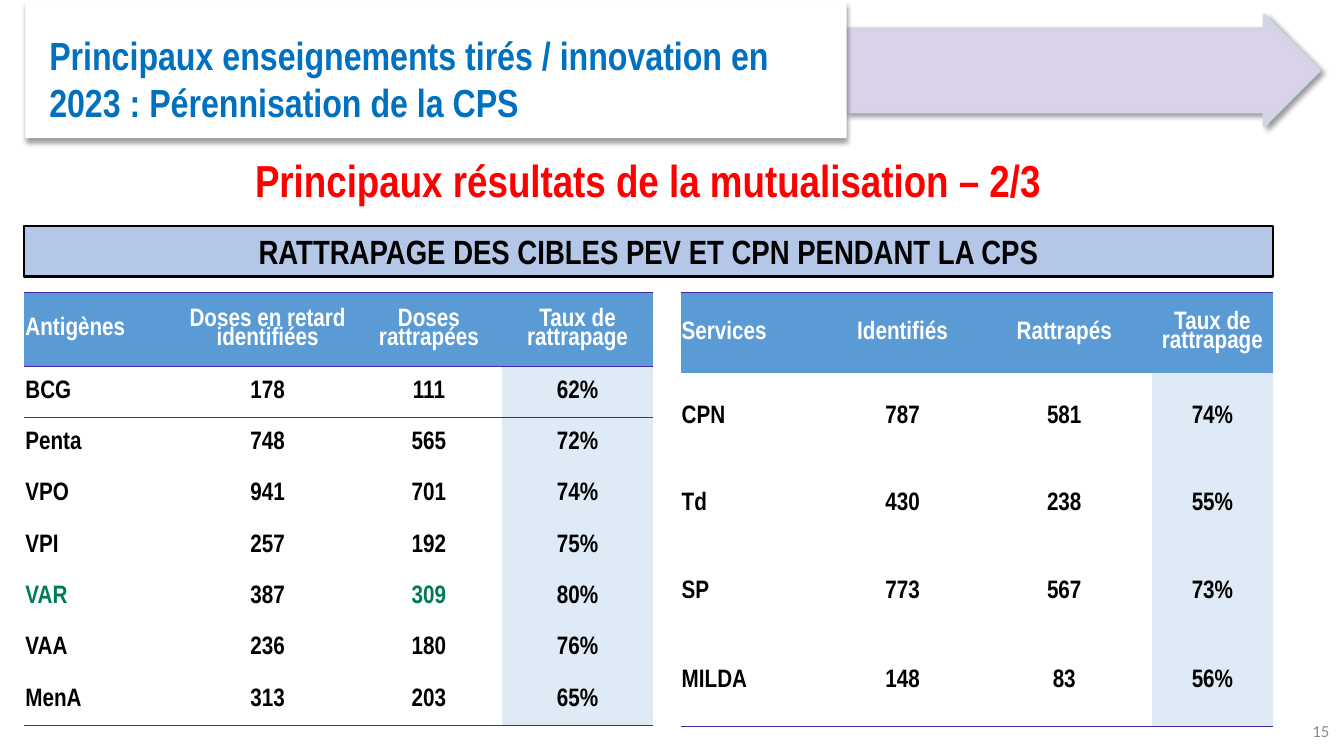
from dataclasses import dataclass
from typing import Any, Optional

from lxml.etree import SubElement
from pptx import Presentation
from pptx.dml.color import RGBColor
from pptx.enum.shapes import MSO_SHAPE
from pptx.enum.text import MSO_ANCHOR, PP_ALIGN
from pptx.oxml import parse_xml
from pptx.oxml.ns import nsdecls, qn
from pptx.util import Cm, Pt

WHITE = RGBColor(0xFF, 0xFF, 0xFF)
BLACK = RGBColor(0x00, 0x00, 0x00)
RED = RGBColor(0xFF, 0x00, 0x00)
GREEN = RGBColor(0x00, 0x7A, 0x5A)
GREY = RGBColor(0x8C, 0x8C, 0x8C)
TITLE_BLUE = RGBColor(0x00, 0x70, 0xC0)
BANNER_BLUE = RGBColor(0xB4, 0xC7, 0xE7)
HEADER_BLUE = RGBColor(0x5B, 0x9B, 0xD5)
RATE_BLUE = RGBColor(0xDE, 0xEB, 0xF7)
LILAC = RGBColor(0xD9, 0xD2, 0xE9)
ARROW_EDGE = RGBColor(0xCF, 0xD7, 0xE7)
RULE_PURPLE = RGBColor(0x46, 0x27, 0xA9)

NARROW = "Arial Narrow"
PLAIN_TABLE_STYLE = "{2D5ABB26-0587-4C30-8999-92F81FD0307C}"


@dataclass
class Block:
    """A shape or text box; lengths in centimetres, sizes in points."""
    left: float
    top: float
    width: float
    height: float
    shape: Optional[MSO_SHAPE] = None
    fill: Optional[RGBColor] = None
    line: Optional[RGBColor] = None
    line_width: float = 1.5
    adjustment: Optional[float] = None
    shadow_angle: Optional[int] = None
    text: str = ""
    size: float = 18
    color: RGBColor = BLACK
    font: str = NARROW
    bold: bool = True
    align: PP_ALIGN = PP_ALIGN.LEFT
    anchor: MSO_ANCHOR = MSO_ANCHOR.TOP
    margin: Optional[float] = None


@dataclass
class CatchUpTable:
    left: float
    columns: list[float]
    heights: list[float]
    rows: list[list[str]]
    rule_under_header: bool = False
    highlights: tuple[str, ...] = ()


BLOCKS = [
    # Header arrow and title card
    Block(21.34, 0.38, 11.91, 2.79, MSO_SHAPE.RIGHT_ARROW, LILAC, ARROW_EDGE, 2,
          adjustment=0.75, shadow_angle=45),
    Block(0.64, 0.05, 20.7, 3.43, MSO_SHAPE.RECTANGLE, WHITE, shadow_angle=90),
    # Slide number
    Block(32.28, 17.88, 1.47, 1.09, text="15", size=12, color=GREY, font="Calibri",
          bold=False, align=PP_ALIGN.RIGHT, anchor=MSO_ANCHOR.MIDDLE),
    # Title, banner and subtitle
    Block(0.86, 0.61, 20.19, 2.72, MSO_SHAPE.ROUNDED_RECTANGLE, adjustment=0.167,
          text="Principaux enseignements tirés / innovation en 2023 : "
               "Pérennisation de la CPS",
          size=28, color=TITLE_BLUE, anchor=MSO_ANCHOR.MIDDLE, margin=0.25),
    Block(0.61, 5.69, 31.47, 1.28, MSO_SHAPE.RECTANGLE, BANNER_BLUE, BLACK,
          text="RATTRAPAGE DES CIBLES PEV ET CPN PENDANT LA CPS",
          size=24, align=PP_ALIGN.CENTER),
    Block(0.61, 3.73, 31.47, 1.62,
          text="Principaux résultats de la mutualisation – 2/3",
          size=32, color=RED, align=PP_ALIGN.CENTER),
]

TABLE_TOP = 7.37
TABLES = [
    CatchUpTable(
        0.61, [3.91, 4.45, 3.68, 3.81], [1.87] + [1.29] * 6 + [1.31],
        [["Antigènes", "Doses en retard identifiées", "Doses rattrapées",
          "Taux de rattrapage"],
         ["BCG", "178", "111", "62%"],
         ["Penta", "748", "565", "72%"],
         ["VPO", "941", "701", "74%"],
         ["VPI", "257", "192", "75%"],
         ["VAR", "387", "309", "80%"],
         ["VAA", "236", "180", "76%"],
         ["MenA", "313", "203", "65%"]],
        rule_under_header=True, highlights=("VAR", "309")),
    CatchUpTable(
        17.15, [3.73, 3.73, 4.42, 3.05], [2.03] + [2.21] * 3 + [2.27],
        [["Services", "Identifiés", "Rattrapés", "Taux de rattrapage"],
         ["CPN", "787", "581", "74%"],
         ["Td", "430", "238", "55%"],
         ["SP", "773", "567", "73%"],
         ["MILDA", "148", "83", "56%"]]),
]


def set_all(target: Any, values: dict[str, Any]) -> None:
    for name, value in values.items():
        setattr(target, name, value)


def write(frame: Any, text: str, align: PP_ALIGN, size: float, color: RGBColor,
          font: str = NARROW, bold: bool = True, spacing: float = 1.0) -> None:
    para = frame.paragraphs[0]
    set_all(para, {"alignment": align, "line_spacing": spacing})
    span = para.add_run()
    span.text = text
    set_all(span.font, {"name": font, "size": Pt(size), "bold": bold})
    span.font.color.rgb = color


def add_shadow(shape: Any, angle: int) -> None:
    shape._element.spPr.append(parse_xml(
        f'<a:effectLst {nsdecls("a")}><a:outerShdw blurRad="{Pt(4)}" dist="{Pt(3)}" '
        f'dir="{angle * 60000}" algn="tl" rotWithShape="0"><a:srgbClr val="000000">'
        '<a:alpha val="40000"/></a:srgbClr></a:outerShdw></a:effectLst>'))


def draw_block(page: Any, block: Block) -> None:
    place = [Cm(v) for v in (block.left, block.top, block.width, block.height)]
    if block.shape is None:
        box = page.shapes.add_textbox(*place)
    else:
        box = page.shapes.add_shape(block.shape, *place)
        if block.adjustment is not None:
            box.adjustments[0] = block.adjustment
        for part, color in ((box.fill, block.fill), (box.line.fill, block.line)):
            if color is None:
                part.background()
            else:
                part.solid()
                part.fore_color.rgb = color
        if block.line is not None:
            box.line.width = Pt(block.line_width)
        if block.shadow_angle is None:
            box.shadow.inherit = False
        else:
            add_shadow(box, block.shadow_angle)
    if block.text:
        frame = box.text_frame
        set_all(frame, {"word_wrap": True, "vertical_anchor": block.anchor})
        if block.margin is not None:
            sides = ("left", "right", "top", "bottom")
            set_all(frame, {f"margin_{side}": Cm(block.margin) for side in sides})
        write(frame, block.text, block.align, block.size, block.color,
              block.font, block.bold)


def add_rule(cell: Any, tag: str) -> None:
    line = SubElement(cell._tc.get_or_add_tcPr(), qn(tag), w=str(Pt(1)))
    fill = SubElement(line, qn("a:solidFill"))
    SubElement(fill, qn("a:srgbClr"), val=str(RULE_PURPLE))


def draw_table(page: Any, data: CatchUpTable) -> None:
    frame = page.shapes.add_table(
        len(data.rows), len(data.columns), Cm(data.left), Cm(TABLE_TOP),
        Cm(sum(data.columns)), Cm(sum(data.heights)))
    table = frame.table
    set_all(table, {"first_row": False, "horz_banding": False})
    table._tbl.tblPr.find(qn("a:tableStyleId")).text = PLAIN_TABLE_STYLE
    for column, width in zip(table.columns, data.columns):
        column.width = Cm(width)
    for row, height in zip(table.rows, data.heights):
        row.height = Cm(height)

    last_row, last_column = len(data.rows) - 1, len(data.columns) - 1
    for r, values in enumerate(data.rows):
        for c, text in enumerate(values):
            cell = table.cell(r, c)
            set_all(cell, {"margin_left": Cm(0.03), "margin_right": Cm(0.03),
                           "margin_top": Cm(0.03), "margin_bottom": 0,
                           "vertical_anchor": MSO_ANCHOR.MIDDLE})
            if r == 0 or (r == 1 and data.rule_under_header):
                add_rule(cell, "a:lnT")
            if r == last_row or (r == 0 and data.rule_under_header):
                add_rule(cell, "a:lnB")
            if r == 0 or c == last_column:
                cell.fill.solid()
                cell.fill.fore_color.rgb = HEADER_BLUE if r == 0 else RATE_BLUE
            else:
                cell.fill.background()
            body_color = GREEN if text in data.highlights else BLACK
            write(cell.text_frame, text, PP_ALIGN.JUSTIFY if c == 0 else PP_ALIGN.CENTER,
                  18, WHITE if r == 0 else body_color, spacing=0.8)


def main() -> None:
    deck = Presentation()
    set_all(deck, {"slide_width": Cm(33.87), "slide_height": Cm(19.05)})
    page = deck.slides.add_slide(deck.slide_layouts[6])
    for block in BLOCKS:
        draw_block(page, block)
    for data in TABLES:
        draw_table(page, data)
    deck.save("out.pptx")


if __name__ == "__main__":
    main()
